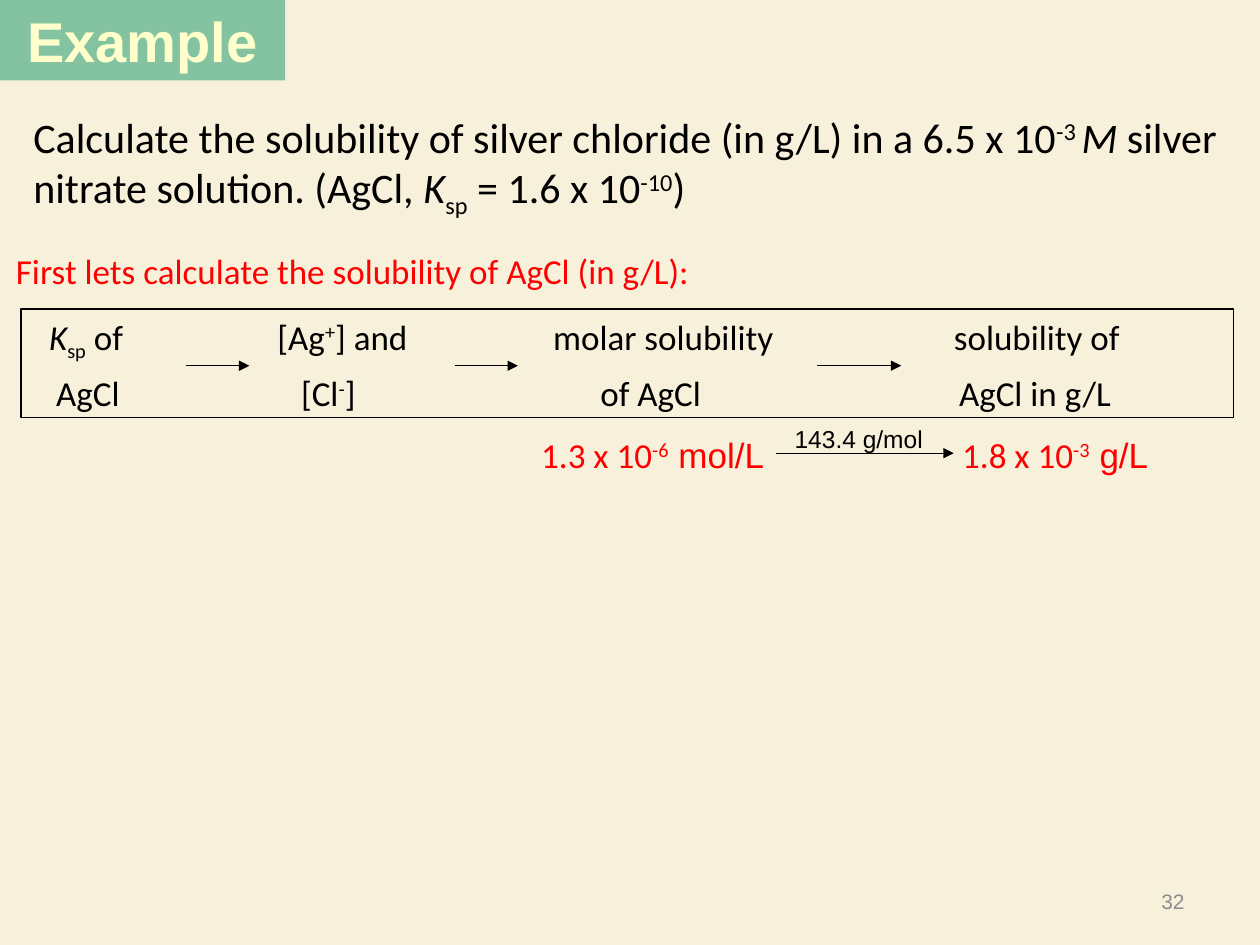
from dataclasses import dataclass

from lxml import etree
from pptx import Presentation
from pptx.dml.color import RGBColor
from pptx.enum import shapes, text
from pptx.oxml import ns
from pptx.util import Pt


@dataclass(frozen=True)
class Theme:
    background: str = "F7F0DB"
    banner: str = "109769"
    banner_text: str = "FFFFCC"
    ink: str = "000000"
    accent: str = "FF0000"
    muted: str = "8C8C8C"
    heading_font: str = "Arial"
    body_font: str = "Calibri"
    title_size: int = 32
    problem_size: int = 24
    body_size: int = 20
    label_size: int = 14
    number_size: int = 12
    line_width: float = 0.75


THEME = Theme()
ALIGN = text.PP_ALIGN
SUPERSCRIPT, SUBSCRIPT = 30000, -25000


def color(value):
    return RGBColor.from_string(value)


def add_child(parent, tag, **attributes):
    return etree.SubElement(parent, ns.qn(tag), attributes)


def format_font(font, size, name, value, bold=False):
    font.size = Pt(size)
    font.name = name
    font.bold = bold
    font.color.rgb = color(value)


def add_runs(paragraph, pieces):
    """A piece is plain text, or (text, style) with "sup", "sub", "italic" or a font name."""
    for piece in pieces:
        content, style = (piece, None) if isinstance(piece, str) else piece
        run = paragraph.add_run()
        run.text = content
        if style == "italic":
            run.font.italic = True
        elif style in ("sup", "sub"):
            offset = SUPERSCRIPT if style == "sup" else SUBSCRIPT
            run.font._element.set("baseline", str(offset))
        elif style:
            run.font.name = style


def add_text(slide, box, pieces, size, value, name=THEME.body_font,
             align=ALIGN.LEFT, wrap=False, anchor=text.MSO_ANCHOR.TOP):
    shape = slide.shapes.add_textbox(*map(Pt, box))
    frame = shape.text_frame
    frame.word_wrap = wrap
    frame.vertical_anchor = anchor
    paragraph = frame.paragraphs[0]
    paragraph.alignment = align
    format_font(paragraph.font, size, name, value)
    add_runs(paragraph, pieces)


def add_arrow(slide, start, end, y):
    arrow = slide.shapes.add_connector(
        shapes.MSO_CONNECTOR.STRAIGHT, Pt(start), Pt(y), Pt(end), Pt(y))
    arrow.line.color.rgb = color(THEME.ink)
    arrow.line.width = Pt(THEME.line_width)
    add_child(arrow.line._get_or_add_ln(), "a:tailEnd", type="triangle")
    add_child(arrow._element.spPr, "a:effectLst")


def add_banner(slide, title):
    shape = slide.shapes.title
    shape.left, shape.top, shape.width, shape.height = map(Pt, (0, 0, 163, 46))
    shape.fill.solid()
    shape.fill.fore_color.rgb = color(THEME.banner)
    fill_color = shape._element.spPr.find(".//" + ns.qn("a:srgbClr"))
    add_child(fill_color, "a:alpha", val="50000")
    frame = shape.text_frame
    frame.auto_size = text.MSO_AUTO_SIZE.NONE
    frame.vertical_anchor = text.MSO_ANCHOR.MIDDLE
    frame.text = title
    paragraph = frame.paragraphs[0]
    paragraph.alignment = ALIGN.CENTER
    format_font(paragraph.font, THEME.title_size, THEME.heading_font,
                THEME.banner_text, bold=True)


def add_step_box(slide, box, rows):
    """Each row is (tab stops, pieces); every step starts at its own stop."""
    shape = slide.shapes.add_shape(shapes.MSO_SHAPE.RECTANGLE, *map(Pt, box))
    shape.shadow.inherit = False
    shape.fill.background()
    shape.line.color.rgb = color(THEME.ink)
    shape.line.width = Pt(THEME.line_width)
    frame = shape.text_frame
    frame.word_wrap = True
    frame.vertical_anchor = text.MSO_ANCHOR.TOP
    for index, (stops, pieces) in enumerate(rows):
        paragraph = frame.add_paragraph() if index else frame.paragraphs[0]
        paragraph.alignment = ALIGN.LEFT
        if index:
            paragraph.space_before = Pt(5)
        tabs = add_child(paragraph._p.get_or_add_pPr(), "a:tabLst")
        for stop in stops:
            add_child(tabs, "a:tab", pos=str(Pt(stop)), algn="l")
        format_font(paragraph.font, THEME.body_size, THEME.body_font, THEME.ink)
        add_runs(paragraph, pieces)


def main():
    presentation = Presentation()
    presentation.slide_width, presentation.slide_height = Pt(720), Pt(540)
    slide = presentation.slides.add_slide(presentation.slide_layouts[5])
    slide.background.fill.solid()
    slide.background.fill.fore_color.rgb = color(THEME.background)

    # Title and slide number
    add_banner(slide, "Example")
    add_text(slide, (516, 500.5, 168, 29), ["32"], THEME.number_size, THEME.muted,
             THEME.heading_font, ALIGN.RIGHT, True, text.MSO_ANCHOR.MIDDLE)

    # Problem statement
    problem = ["Calculate the solubility of silver chloride (in g/L) in a 6.5 x 10",
               ("-3 ", "sup"), ("M ", "italic"), "silver nitrate solution. (AgCl, ",
               ("K", "italic"), ("sp", "sub"), " = 1.6 x 10", ("-10", "sup"), ")"]
    add_text(slide, (12, 60, 693, 71), problem, THEME.problem_size, THEME.ink, wrap=True)
    add_text(slide, (2, 139, 403, 32),
             ["First lets calculate the solubility of AgCl (in g/L):"],
             THEME.body_size, THEME.accent)

    # Conversion steps
    add_step_box(slide, (12, 176.5, 693, 62), [
        ((9, 139.5, 297, 526),
         ["\t", ("K", "italic"), ("sp", "sub"), " of\t[Ag", ("+", "sup"),
          "] and\tmolar solubility\tsolubility of"]),
        ((13, 153, 324, 529),
         ["\tAgCl\t[Cl", ("-", "sup"), "]\tof AgCl\tAgCl in g/L"]),
    ])
    for start, end in ((106.5, 142.5), (260, 296), (467, 515)):
        add_arrow(slide, start, end, 209)

    # Result and its conversion by molar mass
    results = (((301, 244, 144, 32), "1.3 x 10", "-6", " mol/L"),
               ((541.5, 244, 123, 32), "1.8 x 10", "-3", " g/L"))
    for box, number, exponent, unit in results:
        add_text(slide, box, [number, (exponent, "sup"), (unit, THEME.heading_font)],
                 THEME.body_size, THEME.accent, align=ALIGN.CENTER)
    add_text(slide, (447, 238.5, 88, 24.5), ["143.4 g/mol"], THEME.label_size,
             THEME.ink, THEME.heading_font)
    add_arrow(slide, 443.5, 545, 259)

    presentation.save("out.pptx")


if __name__ == "__main__":
    main()
